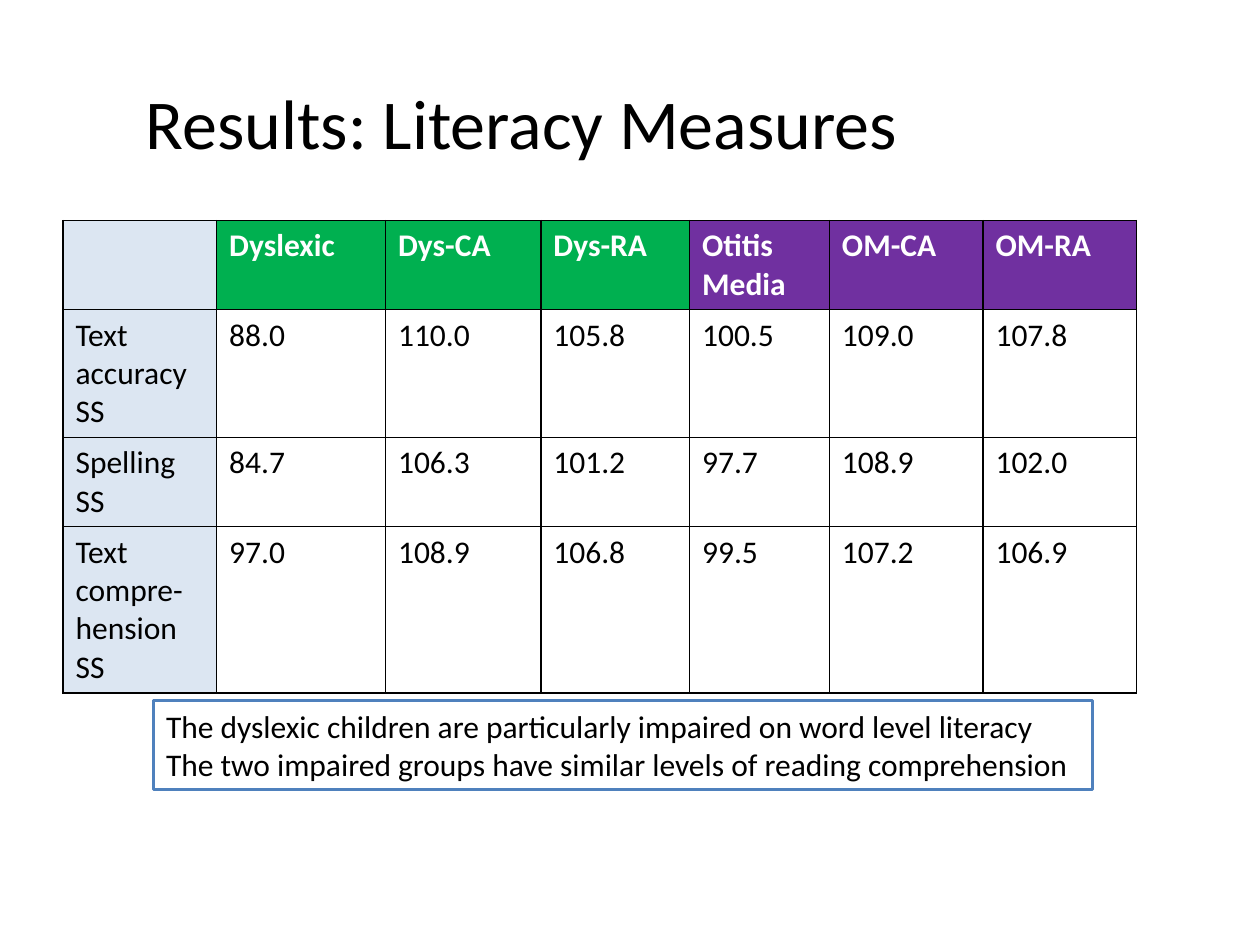
from dataclasses import dataclass
from typing import Optional

from lxml.etree import SubElement
from pptx import Presentation
from pptx.dml.color import RGBColor as Color
from pptx.enum.shapes import MSO_SHAPE as Shape
from pptx.enum.text import MSO_ANCHOR as Anchor, MSO_AUTO_SIZE as AutoSize, PP_ALIGN as Align
from pptx.oxml.ns import qn
from pptx.util import Pt


@dataclass(frozen=True)
class Theme:
    font: str = "Calibri"
    title_size: float = 40
    body_size: float = 18
    text: str = "000000"
    header_text: str = "FFFFFF"
    label_fill: str = "DCE6F2"
    dyslexic_fill: str = "00B050"
    otitis_fill: str = "7030A0"
    note_fill: str = "FFFFFF"
    note_line: str = "4F81BD"
    border: str = "000000"


@dataclass(frozen=True)
class Box:
    left: float
    top: float
    width: float
    height: float

    def lengths(self) -> tuple:
        return Pt(self.left), Pt(self.top), Pt(self.width), Pt(self.height)


@dataclass(frozen=True)
class Group:
    name: str
    fill: str
    width: float


@dataclass(frozen=True)
class Measure:
    name: str
    height: float
    scores: tuple


THEME = Theme()
TITLE_BOX = Box(30.2, 28, 535.7, 82.8)
TABLE_BOX = Box(36, 126, 613.6, 270.4)
NOTE_BOX = Box(87.8, 400.3, 536.4, 51)
LABEL_WIDTH = 87.8
HEADER_HEIGHT = 51

GROUPS = (
    Group("Dyslexic", THEME.dyslexic_fill, 96.5),
    Group("Dys-CA", THEME.dyslexic_fill, 88.8),
    Group("Dys-RA", THEME.dyslexic_fill, 85),
    Group("Otitis Media", THEME.otitis_fill, 79.9),
    Group("OM-CA", THEME.otitis_fill, 87.8),
    Group("OM-RA", THEME.otitis_fill, 87.8),
)
MEASURES = (
    Measure("Text accuracy SS", 73, ("88.0", "110.0", "105.8", "100.5", "109.0", "107.8")),
    Measure("Spelling SS", 51, ("84.7", "106.3", "101.2", "97.7", "108.9", "102.0")),
    Measure("Text compre-hension SS", 95, ("97.0", "108.9", "106.8", "99.5", "107.2", "106.9")),
)
NOTES = (
    "The dyslexic children are particularly impaired on word level literacy",
    "The two impaired groups have similar levels of reading comprehension",
)


def write(frame, *lines: str, size: float = THEME.body_size, color: str = THEME.text,
          bold: bool = False, align: Align = Align.LEFT) -> None:
    for index, line in enumerate(lines):
        paragraph = frame.add_paragraph() if index else frame.paragraphs[0]
        paragraph.text = line
        paragraph.alignment = align
        font = paragraph.font
        font.name, font.size, font.bold = THEME.font, Pt(size), bold
        font.color.rgb = Color.from_string(color)


def add_borders(cell) -> None:
    properties = cell._tc.get_or_add_tcPr()
    for index, side in enumerate(("lnL", "lnR", "lnT", "lnB")):
        line = properties.makeelement(qn(f"a:{side}"), {"w": str(Pt(1))})
        fill = SubElement(line, qn("a:solidFill"))
        SubElement(fill, qn("a:srgbClr"), val=THEME.border)
        properties.insert(index, line)


def fill_cell(cell, text: str, fill: Optional[str] = None,
              color: str = THEME.text, bold: bool = False) -> None:
    write(cell.text_frame, text, color=color, bold=bold)
    if fill:
        cell.fill.solid()
        cell.fill.fore_color.rgb = Color.from_string(fill)
    else:
        cell.fill.background()
    add_borders(cell)


def add_title(slide, text: str) -> None:
    frame = slide.shapes.add_textbox(*TITLE_BOX.lengths()).text_frame
    frame.word_wrap = True
    frame.vertical_anchor = Anchor.MIDDLE
    write(frame, text, size=THEME.title_size, align=Align.CENTER)


def add_results(slide) -> None:
    table = slide.shapes.add_table(
        len(MEASURES) + 1, len(GROUPS) + 1, *TABLE_BOX.lengths()).table
    table.first_row = table.horz_banding = False
    widths = (LABEL_WIDTH, *(group.width for group in GROUPS))
    heights = (HEADER_HEIGHT, *(measure.height for measure in MEASURES))
    for column, width in zip(table.columns, widths):
        column.width = Pt(width)
    for row, height in zip(table.rows, heights):
        row.height = Pt(height)

    fill_cell(table.cell(0, 0), "", THEME.label_fill)
    for column, group in enumerate(GROUPS, 1):
        fill_cell(table.cell(0, column), group.name, group.fill, THEME.header_text, True)
    for row, measure in enumerate(MEASURES, 1):
        fill_cell(table.cell(row, 0), measure.name, THEME.label_fill)
        for column, score in enumerate(measure.scores, 1):
            fill_cell(table.cell(row, column), score)


def add_note(slide) -> None:
    shape = slide.shapes.add_shape(Shape.RECTANGLE, *NOTE_BOX.lengths())
    shape.shadow.inherit = False
    shape.fill.solid()
    shape.fill.fore_color.rgb = Color.from_string(THEME.note_fill)
    shape.line.color.rgb = Color.from_string(THEME.note_line)
    shape.line.width = Pt(2)
    frame = shape.text_frame
    frame.word_wrap = False
    frame.auto_size = AutoSize.SHAPE_TO_FIT_TEXT
    frame.vertical_anchor = Anchor.TOP
    write(frame, *NOTES)


def main() -> None:
    presentation = Presentation()
    presentation.slide_width, presentation.slide_height = Pt(720), Pt(540)
    slide = presentation.slides.add_slide(presentation.slide_layouts[6])
    add_title(slide, "Results: Literacy Measures")
    add_results(slide)
    add_note(slide)
    presentation.save("out.pptx")


if __name__ == "__main__":
    main()
